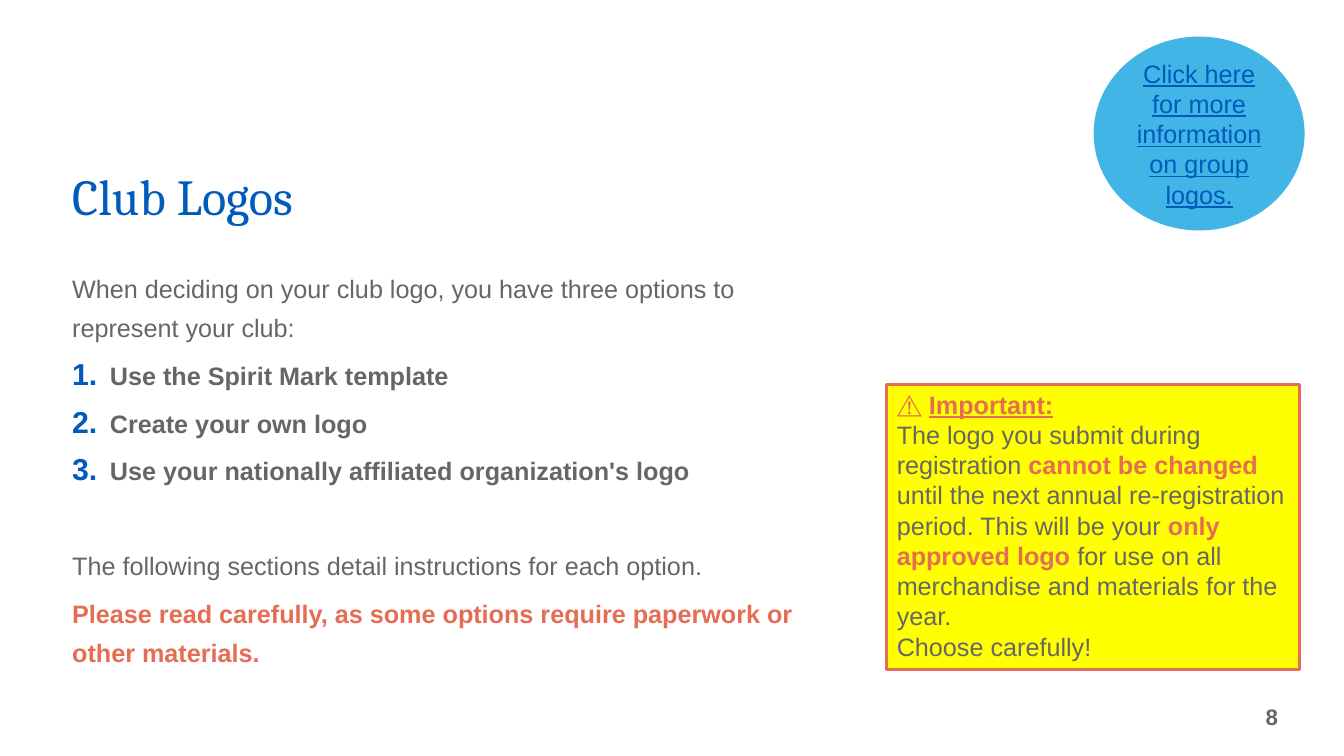
import pptx
import pptx.util
import pptx.dml.color
import pptx.enum.shapes
import pptx.enum.text
from lxml import etree

Cm, Pt = pptx.util.Cm, pptx.util.Pt
ALIGN = pptx.enum.text.PP_ALIGN
ANCHOR = pptx.enum.text.MSO_ANCHOR
SHAPE = pptx.enum.shapes.MSO_SHAPE

COLORS = {"blue": "005BBB", "sky": "41B6E6", "gray": "666666",
          "coral": "E56D54", "yellow": "FFFF00"}

# Text styles: font attributes, and the colour name
STYLES = {
    "title": ({"name": "Cambria", "size": Pt(36)}, "blue"),
    "number": ({"name": "Arial", "size": Pt(16), "bold": True}, "gray"),
    "plain": ({"name": "Arial", "size": Pt(18)}, "gray"),
    "strong": ({"name": "Arial", "size": Pt(18), "bold": True}, "gray"),
    "alert": ({"name": "Arial", "size": Pt(18), "bold": True}, "coral"),
    "heading": ({"name": "Arial", "size": Pt(18), "bold": True, "underline": True}, "coral"),
    "link": ({"name": "Arial", "size": Pt(18), "underline": True}, "blue"),
}

# Each paragraph is a list of (text, style) spans
TITLE = [[("Club Logos", "title")]]
PAGE_NUMBER = [[("8", "number")]]
MORE_INFO = [[("Click here for more information on group logos.", "link")]]
INTRO = [("When deciding on your club logo, you have three options to "
          "represent your club:", "plain")]
OPTIONS = ["Use the Spirit Mark template",
           "Create your own logo",
           "Use your nationally affiliated organization's logo"]
CLOSING = [
    [("The following sections detail instructions for each option.", "plain")],
    [("Please read carefully, as some options require paperwork or "
      "other materials.", "alert")],
]
IMPORTANT = [
    [("⚠️ ", "alert"), ("Important:\n", "heading"),
     ("The logo you submit during registration ", "plain"),
     ("cannot be changed ", "alert"),
     ("until the next annual re-registration period. This will be your ", "plain"),
     ("only approved logo ", "alert"),
     ("for use on all merchandise and materials for the year.", "plain")],
    [("Choose carefully!", "plain")],
]

# Left, top, width, height in centimetres
PLACES = {
    "title": (1.57, 4.17, 29.21, 1.65),
    "page_number": (21.03, 17.55, 11.43, 1.02),
    "more_info": (27.58, 0.94, 5.28, 4.85),
    "body": (1.57, 6.53, 19.46, 10.03),
    "important": (22.35, 9.68, 10.41, 7.19),
}


def rgb(name):
    return pptx.dml.color.RGBColor.from_string(COLORS[name])


def write(box, paragraphs, anchor=ANCHOR.TOP, **para_format):
    """Fill a box with paragraphs of styled spans; return the paragraphs."""
    frame = box.text_frame
    frame.word_wrap = True
    frame.vertical_anchor = anchor
    for index, spans in enumerate(paragraphs):
        para = frame.add_paragraph() if index else frame.paragraphs[0]
        for key, value in para_format.items():
            setattr(para, key, value)
        for text, style in spans:
            span = para.add_run()
            span.text = text.rstrip("\n")
            font_values, color = STYLES[style]
            for key, value in font_values.items():
                setattr(span.font, key, value)
            span.font.color.rgb = rgb(color)
            if text.endswith("\n"):
                para.add_line_break()
    return frame.paragraphs


def add_text(page, place, paragraphs, **formats):
    box = page.shapes.add_textbox(*map(Cm, PLACES[place]))
    return write(box, paragraphs, **formats)


def add_panel(page, kind, place, fill, line, line_width, paragraphs, **formats):
    panel = page.shapes.add_shape(kind, *map(Cm, PLACES[place]))
    panel.shadow.inherit = False
    panel.fill.solid()
    panel.fill.fore_color.rgb = rgb(fill)
    panel.line.color.rgb = rgb(line)
    panel.line.width = Pt(line_width)
    write(panel, paragraphs, **formats)


def number(para):
    """Give a paragraph a large blue automatic number with a hanging indent."""
    properties = para._p.get_or_add_pPr()
    indent = Cm(0.95)
    properties.set("marL", str(indent))
    properties.set("indent", str(-indent))
    color = pptx.oxml.ns.qn("a:buClr")
    bullet_color = etree.SubElement(properties, color)
    etree.SubElement(bullet_color, pptx.oxml.ns.qn("a:srgbClr"), val=COLORS["blue"])
    etree.SubElement(properties, pptx.oxml.ns.qn("a:buSzPct"), val="120000")
    etree.SubElement(properties, pptx.oxml.ns.qn("a:buFont"), typeface="Arial")
    etree.SubElement(properties, pptx.oxml.ns.qn("a:buAutoNum"), type="arabicPeriod")


def add_body(page):
    options = [[(option, "strong")] for option in OPTIONS]
    paras = add_text(page, "body", [INTRO] + options + CLOSING, line_spacing=1.3)
    for para in paras[1:]:
        para.space_before = Pt(6)
    after_options = 1 + len(OPTIONS)
    paras[after_options].space_before = Pt(40)
    for para in paras[1:after_options]:
        number(para)


def main():
    deck = pptx.Presentation()
    deck.slide_width, deck.slide_height = Cm(33.87), Cm(19.05)
    page = deck.slides.add_slide(deck.slide_layouts[6])
    add_text(page, "title", TITLE, anchor=ANCHOR.BOTTOM, line_spacing=0.9)
    add_text(page, "page_number", PAGE_NUMBER, anchor=ANCHOR.MIDDLE,
             alignment=ALIGN.RIGHT)
    add_panel(page, SHAPE.OVAL, "more_info", "sky", "sky", 1, MORE_INFO,
              anchor=ANCHOR.MIDDLE, alignment=ALIGN.CENTER)
    add_body(page)
    add_panel(page, SHAPE.RECTANGLE, "important", "yellow", "coral", 2.25,
              IMPORTANT, alignment=ALIGN.LEFT)
    deck.save("out.pptx")


if __name__ == "__main__":
    main()
